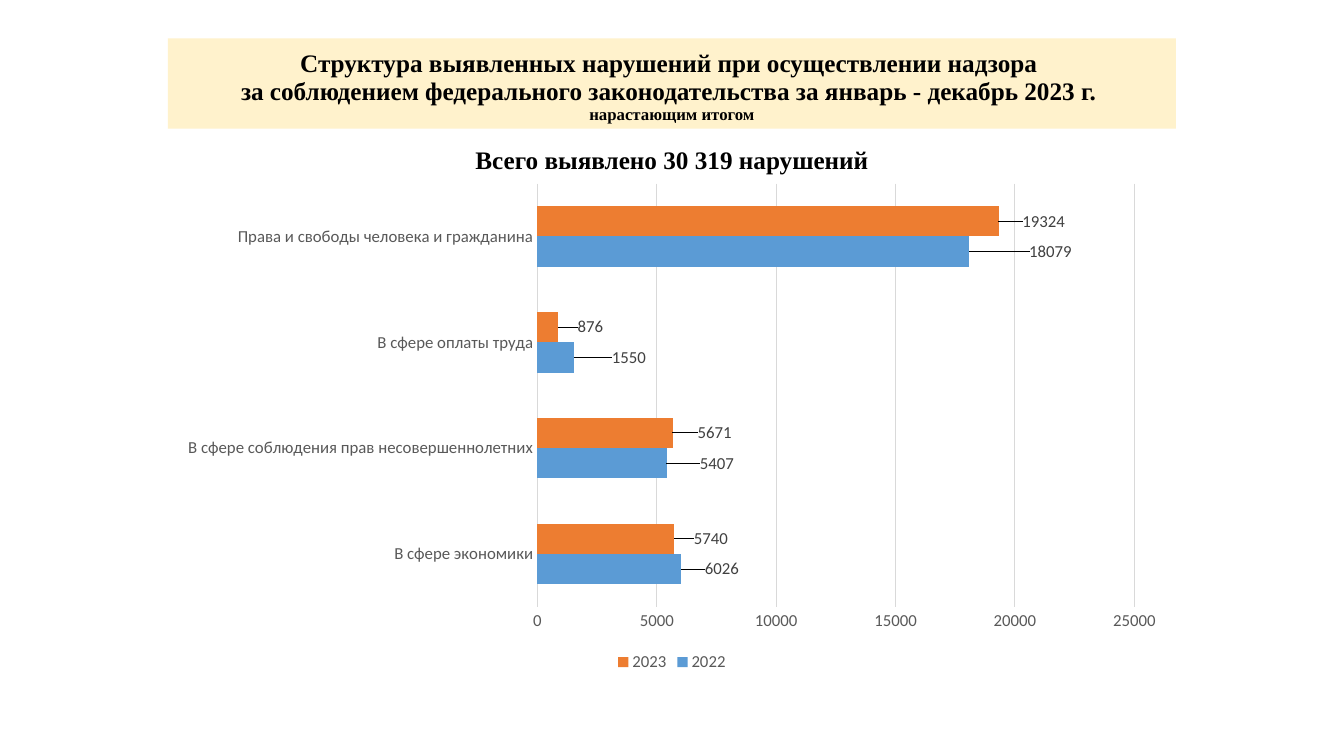
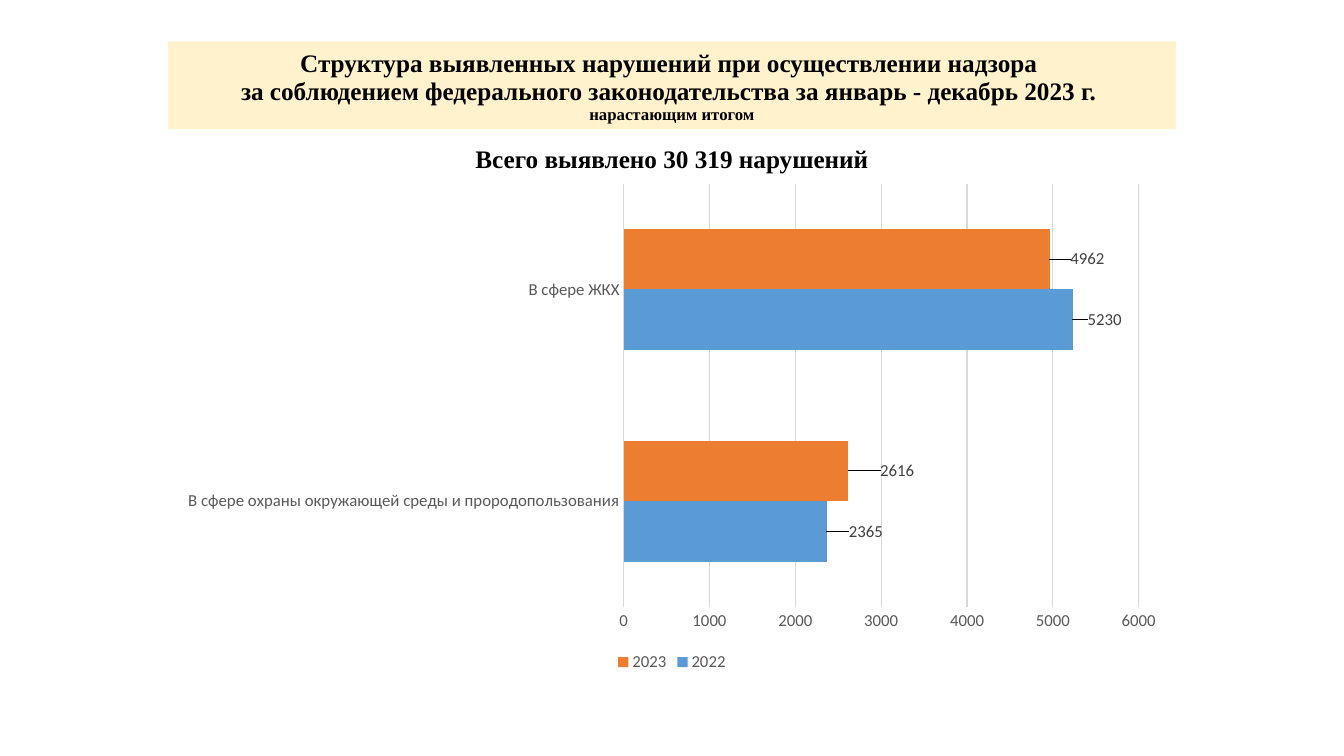
from copy import deepcopy
from lxml.etree import SubElement
from pptx import Presentation
from pptx.chart.data import CategoryChartData
from pptx.dml.color import RGBColor
from pptx.enum.chart import XL_CHART_TYPE, XL_LABEL_POSITION, XL_LEGEND_POSITION, XL_TICK_MARK
from pptx.enum.text import MSO_ANCHOR, MSO_AUTO_SIZE, PP_ALIGN
from pptx.oxml.ns import qn
from pptx.util import Pt

HEADING = (
    "Структура выявленных нарушений при осуществлении надзора \v"
    "за соблюдением федерального законодательства за январь - декабрь 2023 г. \v"
    "нарастающим итогом"
)
TOTAL = "Всего выявлено 30 319 нарушений"
SERIES_COLORS = {"2022": "5B9BD5", "2023": "ED7D31"}
SLIDES = [
    {
        "band_top": 27.5,
        "total_top": 103.5,
        "categories": [
            "В сфере экономики",
            "В сфере соблюдения прав несовершеннолетних",
            "В сфере оплаты труда",
            "Права и свободы человека и гражданина",
        ],
        "values": {"2022": [6026, 5407, 1550, 18079], "2023": [5740, 5671, 876, 19324]},
        "label_shifts": {"2022": [14, 21, 24, 40], "2023": [11, 15, 11, 14]},
    },
    {
        "band_top": 29.5,
        "total_top": 103,
        "categories": ["В сфере охраны окружающей среды и прородопользования", "В сфере ЖКХ"],
        "values": {"2022": [2365, 5230], "2023": [2616, 4962]},
        "label_shifts": {"2022": [13, 8], "2023": [20, 12]},
    },
]
LEFT, WIDTH = 120, 720
BAND_BOTTOM = 92
TOTAL_HEIGHT = 26
CHART_TOP, CHART_HEIGHT = 124, 359
BAND, BLACK, GRAY, LABEL, GRID = "FFF2CC", "000000", "595959", "404040", "D9D9D9"


def color(value):
    return RGBColor.from_string(value)


def set_font(font, size, tint, name="Calibri", bold=False):
    font.size = Pt(size)
    font.name = name
    font.bold = bold
    font.color.rgb = color(tint)


def place(box, top, height):
    box.left, box.top, box.width, box.height = Pt(LEFT), Pt(top), Pt(WIDTH), Pt(height)


def fill_placeholder(box, text, sizes, spacing, anchor):
    frame = box.text_frame
    frame.text = text
    frame.word_wrap = True
    frame.auto_size = MSO_AUTO_SIZE.NONE
    frame.vertical_anchor = anchor
    para = frame.paragraphs[0]
    para.alignment = PP_ALIGN.CENTER
    para.line_spacing = spacing
    para.space_before = Pt(0)
    for span, size in zip(para.runs, sizes):
        set_font(span.font, size, BLACK, "Times New Roman", True)
        line_break = span.font._element.getparent().getnext()
        if line_break is not None and line_break.tag == qn("a:br"):
            line_break.insert(0, deepcopy(span.font._element))


def shift_labels(series, shifts):
    for index, shift in enumerate(shifts):
        label = series.points[index].data_label
        label.position = XL_LABEL_POSITION.OUTSIDE_END
        set_font(label.font, 12, LABEL)
    for element, shift in zip(series._element.iter(qn("c:dLbl")), shifts):
        layout = SubElement(element, qn("c:layout"))
        manual = SubElement(layout, qn("c:manualLayout"))
        SubElement(manual, qn("c:x")).set("val", str(shift / WIDTH))
        SubElement(manual, qn("c:y")).set("val", "0")
        element.find(qn("c:idx")).addnext(layout)


def style_axis(axis):
    axis.major_tick_mark = XL_TICK_MARK.NONE
    axis.minor_tick_mark = XL_TICK_MARK.NONE
    axis.format.line.fill.background()
    set_font(axis.tick_labels.font, 12, GRAY)


def add_violations_chart(page, content):
    data = CategoryChartData()
    data.categories = content["categories"]
    for name, values in content["values"].items():
        data.add_series(name, values)
    chart = page.shapes.add_chart(
        XL_CHART_TYPE.BAR_CLUSTERED, Pt(LEFT), Pt(CHART_TOP), Pt(WIDTH), Pt(CHART_HEIGHT), data
    ).chart
    set_font(chart.font, 10, BLACK)
    chart.has_title = False
    chart.has_legend = True
    chart.legend.position = XL_LEGEND_POSITION.BOTTOM
    chart.legend.include_in_layout = False
    set_font(chart.legend.font, 12, GRAY)
    style_axis(chart.category_axis)
    style_axis(chart.value_axis)
    grid = chart.value_axis.major_gridlines.format.line
    grid.color.rgb = color(GRID)
    grid.width = Pt(0.75)
    plot = chart.plots[0]
    plot.gap_width = 150
    plot.vary_by_categories = False
    for series in plot.series:
        series.format.fill.solid()
        series.format.fill.fore_color.rgb = color(SERIES_COLORS[series.name])
        labels = series.data_labels
        labels.show_value = True
        labels.position = XL_LABEL_POSITION.OUTSIDE_END
        set_font(labels.font, 12, LABEL)
        shift_labels(series, content["label_shifts"][series.name])


def build_page(deck, content):
    page = deck.slides.add_slide(deck.slide_layouts[0])
    title, total = page.shapes.title, page.placeholders[1]
    place(title, content["band_top"], BAND_BOTTOM - content["band_top"])
    title.fill.solid()
    title.fill.fore_color.rgb = color(BAND)
    fill_placeholder(title, HEADING, (18, 18, 12), 0.9, MSO_ANCHOR.BOTTOM)
    place(total, content["total_top"], TOTAL_HEIGHT)
    fill_placeholder(total, TOTAL, (18,), 0.8, MSO_ANCHOR.TOP)
    add_violations_chart(page, content)


def main():
    deck = Presentation()
    deck.slide_width, deck.slide_height = Pt(960), Pt(540)
    for content in SLIDES:
        build_page(deck, content)
    deck.save("out.pptx")


if __name__ == "__main__":
    main()
